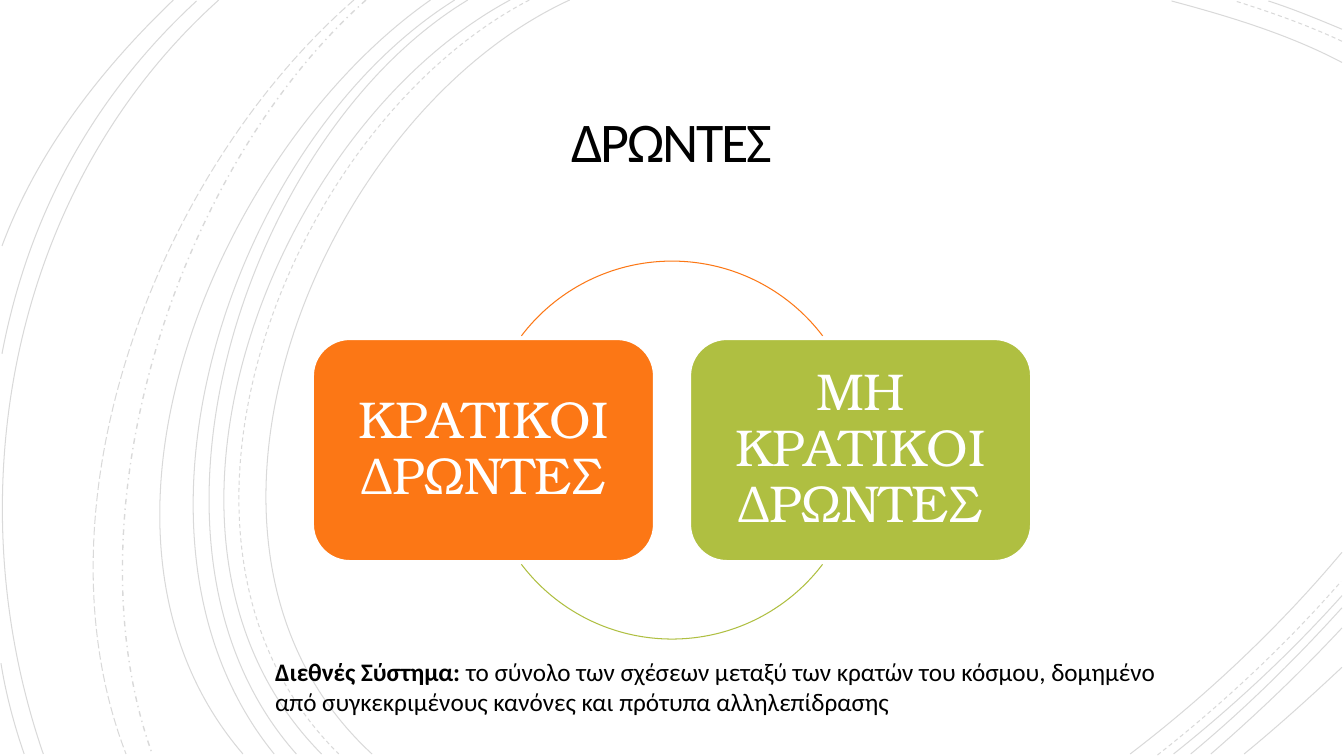
from lxml.etree import SubElement
from pptx import Presentation
from pptx.dml.color import RGBColor
from pptx.enum.dml import MSO_LINE
from pptx.enum.shapes import MSO_SHAPE
from pptx.enum.text import MSO_ANCHOR, MSO_AUTO_SIZE, PP_ALIGN
from pptx.oxml.ns import qn
from pptx.util import Pt

PX = 9144  # 100 px to the inch
ORANGE, GREEN, WHITE, BLACK = "FC7715", "AFBF41", "FFFFFF", "000000"


def rgb(color):
    return RGBColor.from_string(color)


def add_run(p, text, size, font, color, bold=False):
    r = p.add_run()
    r.text = text
    r.font.size, r.font.name, r.font.bold = Pt(size), font, bold
    r.font.color.rgb = rgb(color)
    return r


prs = Presentation()
prs.slide_width, prs.slide_height = 1333 * PX, 750 * PX
slide = prs.slides.add_slide(prs.slide_layouts[6])

# Background curves: start, two control points, end
SOLID, DASH = MSO_LINE.SOLID, MSO_LINE.DASH
curves = [
    (SOLID, (565, 0), (315, 115), (143, 540), (369, 748)),
    (SOLID, (1331, 62), (1278, 34), (1218, 16), (1162, 1)),
    (SOLID, (1121, 748), (1197, 690), (1269, 622), (1331, 548)),
    (DASH, (525, 0), (285, 125), (123, 537), (336, 748)),
    (DASH, (1331, 41), (1297, 25), (1260, 12), (1225, 1)),
    (DASH, (1148, 749), (1213, 698), (1275, 640), (1330, 577)),
    (SOLID, (506, 0), (270, 127), (110, 537), (319, 748)),
    (SOLID, (1331, 29), (1307, 19), (1283, 9), (1258, 1)),
    (SOLID, (1164, 748), (1223, 701), (1280, 648), (1331, 591)),
    (SOLID, (464, 0), (244, 133), (110, 541), (294, 748)),
    (SOLID, (1181, 748), (1234, 704), (1284, 655), (1331, 603)),
    (SOLID, (451, 0), (231, 138), (97, 533), (272, 748)),
    (SOLID, (1201, 748), (1246, 709), (1290, 667), (1331, 623)),
    (SOLID, (427, 0), (217, 147), (53, 529), (241, 748)),
    (SOLID, (1234, 748), (1267, 721), (1299, 692), (1331, 662)),
    (MSO_LINE.DASH_DOT, (363, 0), (176, 166), (65, 509), (151, 748)),
    (MSO_LINE.LONG_DASH, (351, 0), (157, 169), (29, 499), (125, 748)),
    (SOLID, (217, 0), (11, 185), (-46, 490), (43, 748)),
    (SOLID, (195, 1), (92, 96), (28, 214), (2, 351)),
    (SOLID, (1, 658), (6, 689), (14, 719), (24, 748)),
    (SOLID, (172, 0), (100, 69), (37, 150), (2, 244)),
]
background = slide.shapes.add_group_shape()
for dash, start, *points in curves:
    builder = background.shapes.build_freeform(*start, scale=PX)
    builder.add_line_segments(points, close=False)
    s = builder.convert_to_shape()
    s.shadow.inherit = False
    s.fill.background()
    s.line.width = Pt(1 if dash == MSO_LINE.DASH_DOT else 0.75)
    s.line.color.rgb = rgb(BLACK)
    s.line.dash_style = dash
    color = next(s.line._ln.iter(qn("a:srgbClr")))
    SubElement(color, qn("a:alpha"), val="15000")
    # The three straight segments become one Bézier segment
    segments = list(s._element.iter(qn("a:lnTo")))
    outline = segments[0].getparent()
    bezier = SubElement(outline, qn("a:cubicBezTo"))
    for segment in segments:
        bezier.append(segment[0])
        outline.remove(segment)

# Title
title = slide.shapes.add_textbox(192 * PX, 87 * PX, 949 * PX, 115 * PX)
tf = title.text_frame
tf.word_wrap = True
tf.vertical_anchor = MSO_ANCHOR.MIDDLE
p = tf.paragraphs[0]
p.alignment, p.line_spacing = PP_ALIGN.CENTER, 0.85
r = add_run(p, "ΔΡΩΝΤΕΣ", 40, "Calibri", BLACK)
r.font._element.set("spc", "-150")

# Cycle of two actors, each box with its arc (angles in degrees)
actors = [
    ("ΚΡΑΤΙΚΟΙ ΔΡΩΝΤΕΣ", 310, ORANGE, 217.2, 322.8),
    ("ΜΗ ΚΡΑΤΙΚΟΙ ΔΡΩΝΤΕΣ", 684, GREEN, 37.2, 142.8),
]
for text, left, color, arc_start, arc_end in actors:
    box = slide.shapes.add_shape(
        MSO_SHAPE.ROUNDED_RECTANGLE, left * PX, 336 * PX, 339 * PX, 221 * PX)
    box.shadow.inherit = False
    box.fill.solid()
    box.fill.fore_color.rgb = rgb(color)
    box.line.color.rgb = rgb(WHITE)
    box.line.width = Pt(2)
    tf = box.text_frame
    tf.word_wrap = True
    tf.vertical_anchor = MSO_ANCHOR.MIDDLE
    tf.margin_left = tf.margin_right = tf.margin_top = tf.margin_bottom = 15 * PX
    p = tf.paragraphs[0]
    p.alignment, p.line_spacing = PP_ALIGN.CENTER, 0.9
    add_run(p, text, 37, "TeX Gyre Bonum", WHITE)

    arc = slide.shapes.add_shape(MSO_SHAPE.ARC, 479 * PX, 259 * PX, 375 * PX, 375 * PX)
    arc.shadow.inherit = False
    arc.fill.background()
    arc.line.color.rgb = rgb(color)
    arc.line.width = Pt(0.75)
    # An adjustment of 0.6 is one degree
    arc.adjustments[0], arc.adjustments[1] = arc_start * 0.6, arc_end * 0.6

# Definition
definition = slide.shapes.add_textbox(263 * PX, 646 * PX, 937 * PX, 101 * PX)
tf = definition.text_frame
tf.word_wrap = True
tf.auto_size = MSO_AUTO_SIZE.SHAPE_TO_FIT_TEXT
p = tf.paragraphs[0]
add_run(p, "Διεθνές Σύστημα: ", 18, "Calibri", BLACK, bold=True)
add_run(p, "το σύνολο των σχέσεων μεταξύ των κρατών του κόσμου, δομημένο από "
        "συγκεκριμένους κανόνες και πρότυπα αλληλεπίδρασης", 18, "Calibri", BLACK)

prs.save("out.pptx")
